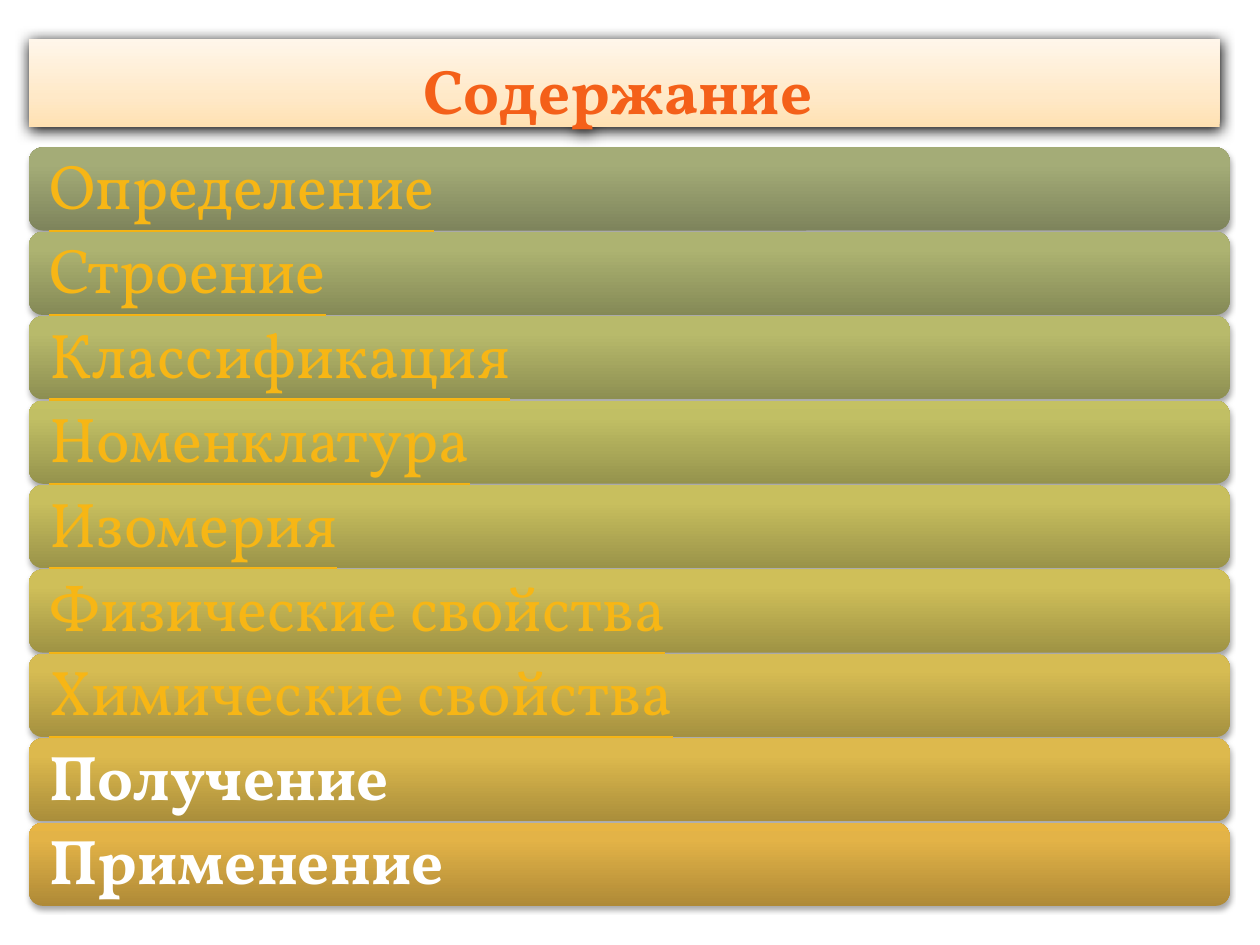
"""Build the contents slide: a gradient heading above nine coloured section bars."""
from dataclasses import dataclass

from lxml import etree
from pptx import Presentation
from pptx.dml.color import RGBColor
from pptx.enum.shapes import MSO_SHAPE
from pptx.enum.text import MSO_ANCHOR, MSO_AUTO_SIZE, PP_ALIGN
from pptx.oxml.ns import qn
from pptx.util import Pt

EMU_PER_PX = 9144
ROUNDED = MSO_SHAPE.ROUNDED_RECTANGLE
TOP, MIDDLE = MSO_ANCHOR.TOP, MSO_ANCHOR.MIDDLE
NO_FIT = MSO_AUTO_SIZE.NONE
LEFT, CENTER = PP_ALIGN.LEFT, PP_ALIGN.CENTER
TITLE_ONLY = 5


@dataclass(frozen=True)
class Shadow:
    """Opacity in percent, blur and distance in points."""
    opacity: int
    blur: float
    distance: float


@dataclass(frozen=True)
class Theme:
    """Colours, type and effects shared by the slide."""
    font: str = "Vollkorn"
    size: int = 36
    heading: str = "F46019"
    link: str = "F7B615"
    plain: str = "FFFFFF"
    heading_stops: tuple = ((0, "FFE1B2"), (35, "FFE9C8"), (100, "FFF6EA"))
    heading_shadow: Shadow = Shadow(100, 8.5, 1)
    bar_shadow: Shadow = Shadow(35, 3.1, 1.8)


@dataclass(frozen=True)
class Section:
    """One contents entry with its bar colours from bottom to top."""
    label: str
    low: str
    middle: str
    high: str
    linked: bool = True


THEME = Theme()
BAR_LEFT, BAR_TOP, BAR_WIDTH, BAR_HEIGHT, BAR_PITCH = 23, 117, 953, 66, 67
SECTIONS = (
    Section("Определение", "7E845C", "A4AC77", "A6AE76"),
    Section("Строение", "858A57", "ADB371", "AFB570"),
    Section("Классификация", "8D8F52", "B8BA6B", "BABC6A"),
    Section("Номенклатура", "95934D", "C1BF64", "C4C163"),
    Section("Изомерия", "9A9349", "C8BF5E", "CBC25D"),
    Section("Физические свойства", "9F9344", "CFBF59", "D2C157"),
    Section("Химические свойства", "A59140", "D6BC53", "D9BF51"),
    Section("Получение", "AA8E3B", "DDB94D", "E0BB4A", linked=False),
    Section("Применение", "AF8A37", "E3B347", "E7B544", linked=False),
)


def px(length: int) -> int:
    """Turn px into EMU."""
    return length * EMU_PER_PX


def apply(target, values: dict) -> None:
    """Set every attribute named in values."""
    for name, value in values.items():
        setattr(target, name, value)


def add_color(parent, color: str):
    """Append an RGB colour element."""
    return etree.SubElement(parent, qn("a:srgbClr"), val=color)


def paint(shape, stops: tuple, shadow: Shadow) -> None:
    """Give a shape an upward gradient, no outline and a downward shadow."""
    shape.fill.gradient()
    shape.fill.gradient_angle = 90
    shape.line.fill.background()
    shape.shadow.inherit = False
    properties = shape._element.spPr
    stop_list = properties.find(qn("a:gradFill")).find(qn("a:gsLst"))
    for stop in list(stop_list):
        stop_list.remove(stop)
    for percent, color in stops:
        add_color(etree.SubElement(stop_list, qn("a:gs"), pos=str(percent * 1000)), color)
    outer = etree.SubElement(
        properties.find(qn("a:effectLst")), qn("a:outerShdw"),
        blurRad=str(Pt(shadow.blur)), dist=str(Pt(shadow.distance)),
        dir="5400000", rotWithShape="0")
    etree.SubElement(add_color(outer, "000000"), qn("a:alpha"), val=str(shadow.opacity * 1000))


def write(shape, text: str, color: str, frame_format: dict,
          paragraph_format: dict, font_format: dict) -> None:
    """Put one formatted paragraph into a shape."""
    frame = shape.text_frame
    frame.text = text
    apply(frame, {"auto_size": NO_FIT, "word_wrap": True, **frame_format})
    paragraph = frame.paragraphs[0]
    apply(paragraph, paragraph_format)
    font = paragraph.runs[0].font
    apply(font, {"name": THEME.font, "size": Pt(THEME.size), **font_format})
    font.color.rgb = RGBColor.from_string(color)


def add_heading(slide, text: str) -> None:
    """Format the title placeholder as the heading panel."""
    title = slide.shapes.title
    apply(title, {"left": px(23), "top": px(31), "width": px(945), "height": px(70)})
    paint(title, THEME.heading_stops, THEME.heading_shadow)
    write(title, text, THEME.heading,
          {"vertical_anchor": TOP, "margin_top": px(10), "margin_bottom": 0,
           "margin_left": px(10), "margin_right": px(20)},
          {"alignment": CENTER}, {"bold": True})


def add_bar(slide, row: int, section: Section) -> None:
    """Draw one section bar in its row."""
    bar = slide.shapes.add_shape(ROUNDED, px(BAR_LEFT), px(BAR_TOP + row * BAR_PITCH),
                                 px(BAR_WIDTH), px(BAR_HEIGHT))
    stops = ((0, section.low), (80, section.middle), (100, section.high))
    paint(bar, stops, THEME.bar_shadow)
    write(bar, section.label, THEME.link if section.linked else THEME.plain,
          {"vertical_anchor": MIDDLE, "margin_left": px(13), "margin_right": px(13),
           "margin_top": 0, "margin_bottom": 0},
          {"alignment": LEFT, "line_spacing": 0.9},
          {"underline": section.linked, "bold": not section.linked})


def main() -> None:
    """Build and save the slide."""
    presentation = Presentation()
    apply(presentation, {"slide_width": px(1000), "slide_height": px(750)})
    slide = presentation.slides.add_slide(presentation.slide_layouts[TITLE_ONLY])
    add_heading(slide, "Содержание")
    for row, section in enumerate(SECTIONS):
        add_bar(slide, row, section)
    presentation.save("out.pptx")


if __name__ == "__main__":
    main()
